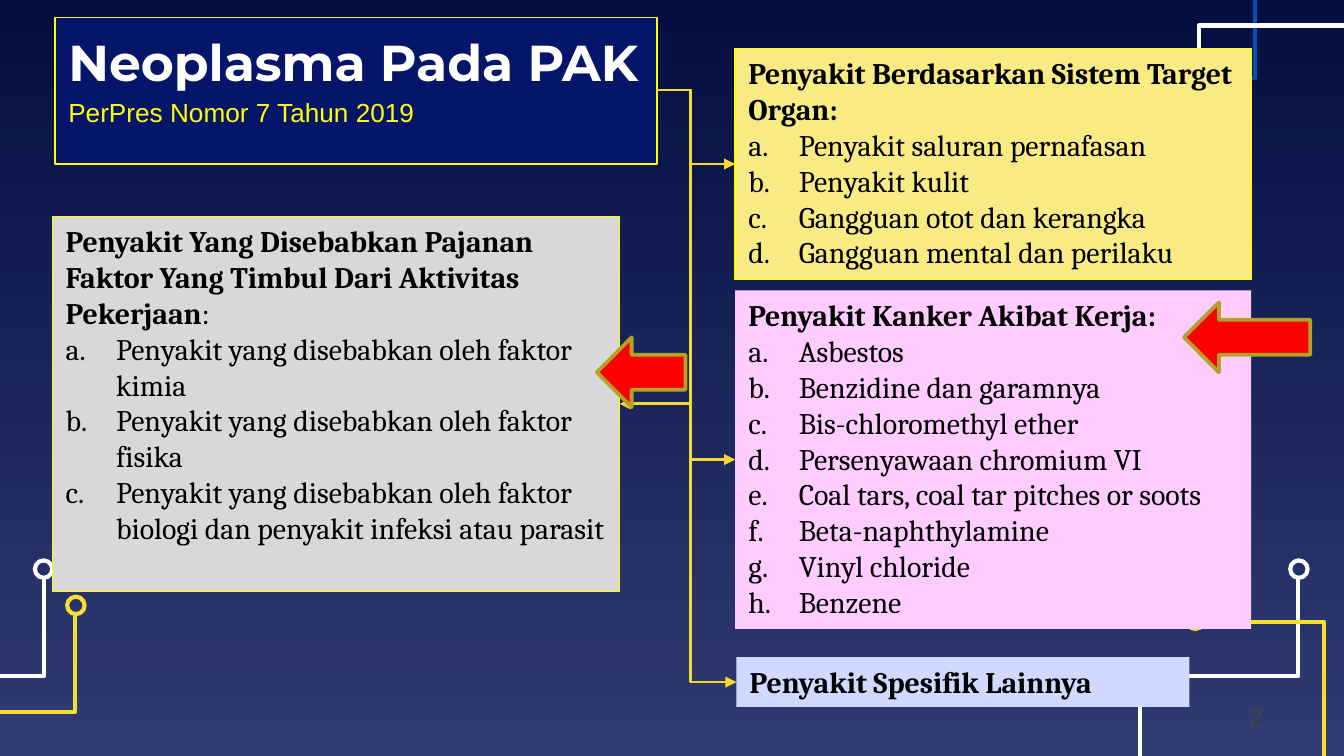
import pptx
import pptx.util
import pptx.dml.color
import pptx.enum.shapes
import pptx.enum.text
import pptx.oxml
import pptx.oxml.ns

Inches = pptx.util.Inches
SHAPES = pptx.enum.shapes.MSO_SHAPE

THEME = {
    "white": "FFFFFF", "black": "000000", "blue": "0152B1", "gold": "F5DE34",
    "connector": "F3DB2D", "yellow": "FFFF00", "navy": "05166A", "grey": "D8D8D8",
    "cream": "F9EB83", "pink": "FFCCFF", "lilac": "D2D9FE", "red": "FF0000",
    "olive": "B2A225", "number": "434343", "top": "040E41", "bottom": "303B72",
    "heading": {"name": "Montserrat", "size": 27, "bold": True},
    "small": {"name": "Arial", "size": 14, "bold": False},
    "strong": {"name": "Cambria", "size": 16, "bold": True},
    "body": {"name": "Cambria", "size": 16, "bold": False},
}
WIDTH = 10
HEIGHT = WIDTH * 9 / 16
INDENT = 3 / 8
RING = 0.13
HUB = (4.89, 0.67)
TRUNK = 5.14

TRACES = [
    ("white", [(9.66, 4.29), (9.66, 5.03), (8.48, 5.03), (8.48, HEIGHT)]),
    ("blue", [(8.45, 0.58), (9.34, 0.58), (9.34, 0)]),
    ("white", [(8.92, 0.93), (8.92, 0.19), (WIDTH, 0.19)]),
    ("gold", [(8.94, 4.63), (9.85, 4.63), (9.85, HEIGHT)]),
    ("white", [(0.33, 4.29), (0.33, 5.03), (0, 5.03)]),
    ("gold", [(0.56, 4.56), (0.56, 5.3), (0, 5.3)]),
]
RINGS = [("white", 9.6, 4.17), ("gold", 8.83, 4.55), ("white", 0.26, 4.17), ("gold", 0.5, 4.44)]

TITLE = ("Neoplasma Pada PAK", (0.41, 0.13, 4.48, 1.09))
LABELS = [
    ("PerPres Nomor 7 Tahun 2019", (0.41, 0.67, 4.25, 0.34), "yellow"),
    ("2", (9.19, 5.16, 0.4, 0.34), "number"),
]
PANELS = [
    ((0.39, 1.61, 4.22, 2.79), "grey", "yellow",
     "Penyakit Yang Disebabkan Pajanan Faktor Yang Timbul Dari Aktivitas Pekerjaan", ":",
     ["Penyakit yang disebabkan oleh faktor kimia",
      "Penyakit yang disebabkan oleh faktor fisika",
      "Penyakit yang disebabkan oleh faktor biologi dan penyakit infeksi atau parasit"]),
    ((5.47, 0.36, 3.84, 1.72), "cream", "yellow",
     "Penyakit Berdasarkan Sistem Target Organ:", "",
     ["Penyakit saluran pernafasan", "Penyakit kulit",
      "Gangguan otot dan kerangka", "Gangguan mental dan perilaku"]),
    ((5.47, 2.16, 3.84, 2.52), "pink", None, "Penyakit Kanker Akibat Kerja:", "",
     ["Asbestos", "Benzidine dan garamnya", "Bis-chloromethyl ether",
      "Persenyawaan chromium VI", "Coal tars, coal tar pitches or soots",
      "Beta-naphthylamine", "Vinyl chloride", "Benzene"]),
    ((5.48, 4.89, 3.37, 0.37), "lilac", None, "Penyakit Spesifik Lainnya", "", []),
]
POINTERS = [(8.81, 2.25, 0.94, 0.52), (4.44, 2.51, 0.66, 0.52)]


def color(name):
    return pptx.dml.color.RGBColor.from_string(THEME[name])


def append_xml(parent, tag, **attributes):
    child = parent.makeelement(pptx.oxml.ns.qn(tag), attributes)
    parent.append(child)
    return child


def paint(shape, fill=None, line=None, weight=0.75):
    shape.shadow.inherit = False
    if fill:
        shape.fill.solid()
        shape.fill.fore_color.rgb = color(fill)
    else:
        shape.fill.background()
    if line:
        shape.line.color.rgb = color(line)
        shape.line.width = pptx.util.Pt(weight)
    else:
        shape.line.fill.background()


def add_preset(page, kind, place, **look):
    shape = page.shapes.add_shape(kind, *map(Inches, place))
    paint(shape, **look)
    return shape


def prepare_frame(shape, top=0.05):
    frame = shape.text_frame
    settings = {"word_wrap": True, "vertical_anchor": pptx.enum.text.MSO_ANCHOR.TOP,
                "margin_top": Inches(top)}
    for name, value in settings.items():
        setattr(frame, name, value)
    return frame


def write(para, text, style, tint="black"):
    para.alignment = pptx.enum.text.PP_ALIGN.LEFT
    span = para.add_run()
    span.text = text
    for name, value in THEME[style].items():
        setattr(span.font, name, pptx.util.Pt(value) if name == "size" else value)
    span.font.color.rgb = color(tint)


def letter(para):
    properties = para._p.get_or_add_pPr()
    properties.set("marL", str(Inches(INDENT)))
    properties.set("indent", str(-Inches(INDENT)))
    append_xml(append_xml(properties, "a:buClr"), "a:srgbClr", val=THEME["black"])
    append_xml(properties, "a:buAutoNum", type="alphaLcPeriod")


def add_panel(page, place, fill, line, heading, suffix, items):
    frame = prepare_frame(add_preset(page, SHAPES.RECTANGLE, place, fill=fill, line=line))
    write(frame.paragraphs[0], heading, "strong")
    if suffix:
        write(frame.paragraphs[0], suffix, "body")
    for item in items:
        para = frame.add_paragraph()
        write(para, item, "body")
        letter(para)


def add_branch(page, place):
    left, top, width, height = place
    end = (left if left > HUB[0] else left + width, top + height / 2)
    branch = page.shapes.add_connector(
        pptx.enum.shapes.MSO_CONNECTOR.ELBOW, *map(Inches, HUB + end))
    branch.line.color.rgb = color("connector")
    branch.line.width = pptx.util.Pt(1.5)
    bend = round((TRUNK - HUB[0]) / (end[0] - HUB[0]) * 100000)
    guides = branch._element.spPr.prstGeom.get_or_add_avLst()
    append_xml(guides, "a:gd", name="adj1", fmla=f"val {bend}")
    append_xml(branch.line._get_or_add_ln(), "a:tailEnd", type="triangle")
    append_xml(branch._element.spPr, "a:effectLst")


def main():
    deck = pptx.Presentation()
    deck.slide_width, deck.slide_height = Inches(WIDTH), Inches(HEIGHT)
    page = deck.slides.add_slide(deck.slide_layouts[6])

    backdrop = page.background.fill
    backdrop.gradient()
    backdrop.gradient_angle = 270
    for stop, name, position in zip(backdrop.gradient_stops, ("top", "bottom"), (0, 1)):
        stop.color.rgb = color(name)
        stop.position = position

    for tint, points in TRACES:
        corners = [tuple(map(Inches, point)) for point in points]
        builder = page.shapes.build_freeform(*corners[0])
        builder.add_line_segments(corners[1:], close=False)
        paint(builder.convert_to_shape(), line=tint, weight=2.25)
    for tint, left, top in RINGS:
        add_preset(page, SHAPES.OVAL, (left, top, RING, RING), line=tint, weight=2.25)

    text, place = TITLE
    banner = add_preset(page, SHAPES.RECTANGLE, place, fill="navy", line="yellow")
    write(prepare_frame(banner, top=0.1).paragraphs[0], text, "heading", "white")
    for text, place, tint in LABELS:
        box = page.shapes.add_textbox(*map(Inches, place))
        write(prepare_frame(box).paragraphs[0], text, "small", tint)

    for panel in PANELS:
        add_panel(page, *panel)
    for panel in PANELS:
        add_branch(page, panel[0])
    for place in POINTERS:
        add_preset(page, SHAPES.LEFT_ARROW, place, fill="red", line="olive", weight=2)

    deck.save("out.pptx")


if __name__ == "__main__":
    main()
